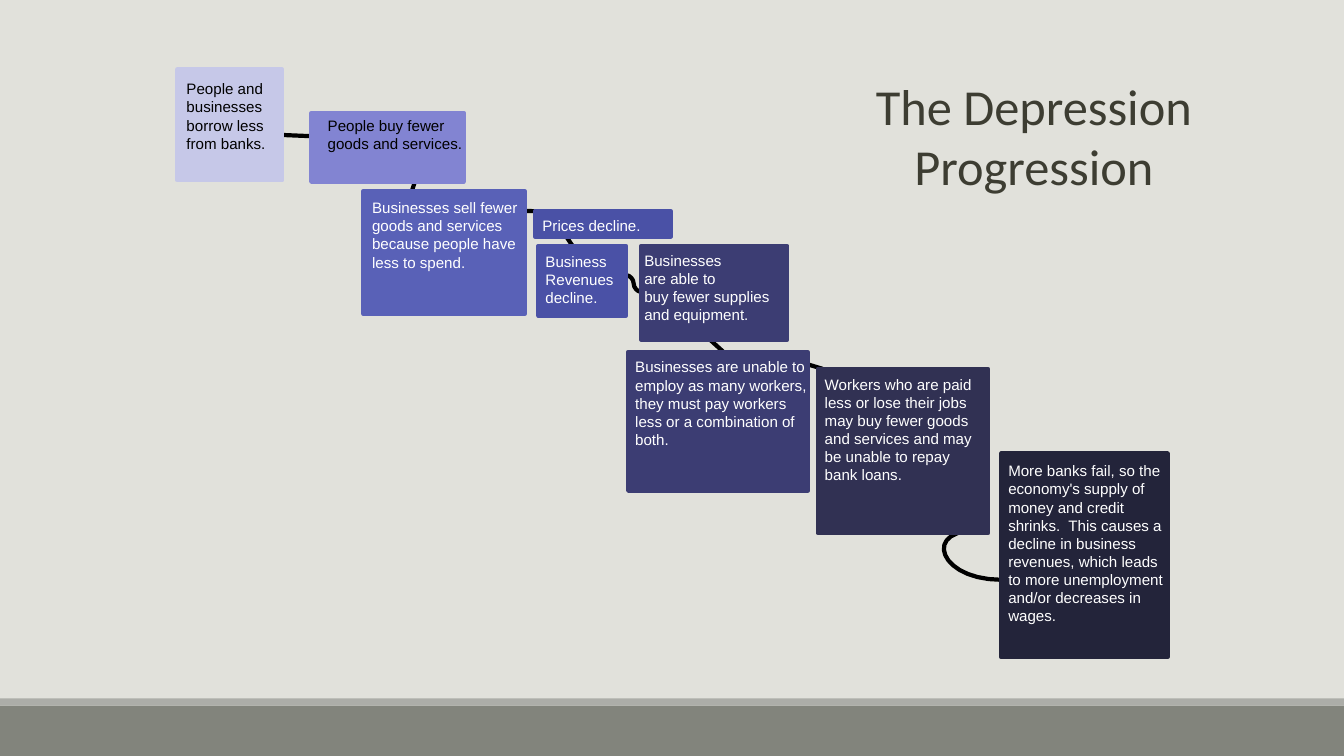
from dataclasses import dataclass

from lxml import etree
from pptx import Presentation
from pptx.dml.color import RGBColor
from pptx.enum.shapes import MSO_CONNECTOR, MSO_SHAPE
from pptx.enum.text import MSO_ANCHOR, MSO_AUTO_SIZE, PP_ALIGN
from pptx.oxml.ns import qn
from pptx.util import Inches, Pt

RECTANGLE = MSO_SHAPE.RECTANGLE
STRAIGHT, CURVE = MSO_CONNECTOR.STRAIGHT, MSO_CONNECTOR.CURVE
ANCHOR_TOP, NO_FIT = MSO_ANCHOR.TOP, MSO_AUTO_SIZE.NONE
ALIGN_LEFT, ALIGN_CENTER = PP_ALIGN.LEFT, PP_ALIGN.CENTER
TITLE_ONLY = 5
SLIDE_WIDTH, SLIDE_HEIGHT = 13.33, 7.5
FOOTER_TOP, EDGE_HEIGHT = 7, 0.07
LINE_WIDTH = Pt(3)
SWING_PIECES = 12

COLORS = {
    "background": "E1E1DB", "footer": "82847C", "footer_edge": "ACADA8",
    "title": "3D3D32", "black": "000000", "white": "FFFFFF",
    "lavender": "C6C8E8", "periwinkle": "8284D2", "blue": "5961B7",
    "indigo": "4A51A6", "navy": "3C3D73", "dusk": "313153", "night": "23243A",
}


@dataclass
class Step:
    """One box of the chain; lengths in inches."""
    left: float
    top: float
    width: float
    height: float
    fill: str
    text: str
    text_color: str = "white"
    left_inset: float = 0.07
    top_inset: float = 0.06
    right_inset: float = 0

    def edge_point(self, side, share):
        """Point on a side, at a share of its length from the left or top."""
        if side in ("left", "right"):
            x = self.left + (self.width if side == "right" else 0)
            return x, self.top + share * self.height
        y = self.top + (self.height if side == "bottom" else 0)
        return self.left + share * self.width, y


STEPS = {
    "borrowing": Step(
        1.76, 0.69, 1.04, 1.1, "lavender",
        "People and businesses\nborrow less\nfrom banks.",
        "black", left_inset=0.09, top_inset=0.1),
    "buying": Step(
        3.09, 1.12, 1.51, 0.68, "periwinkle",
        "People buy fewer goods and services.",
        "black", left_inset=0.16, top_inset=0.03),
    "selling": Step(
        3.6, 1.9, 1.61, 1.21, "blue",
        "Businesses sell fewer goods and services because people have less "
        "to spend.", left_inset=0.09, top_inset=0.07),
    "prices": Step(5.31, 2.09, 1.34, 0.26, "indigo", "Prices decline."),
    "revenues": Step(
        5.34, 2.44, 0.87, 0.69, "indigo", "Business\nRevenues\ndecline."),
    "supplies": Step(
        6.36, 2.44, 1.45, 0.93, "navy",
        "Businesses\nare able to\nbuy fewer supplies and equipment.",
        left_inset=0.03, top_inset=0.05),
    "employment": Step(
        6.23, 3.49, 1.78, 1.38, "navy",
        "Businesses are unable to employ as many workers, they must pay "
        "workers less or a combination of both."),
    "workers": Step(
        8.11, 3.66, 1.69, 1.63, "dusk",
        "Workers who are paid less or lose their jobs may buy fewer goods and "
        "services and may be unable to repay bank loans.", right_inset=0.08),
    "banks": Step(
        9.93, 4.5, 1.65, 2.02, "night",
        "More banks fail, so the economy's supply of money and credit shrinks.  "
        "This causes a decline in business revenues, which leads to more "
        "unemployment and/or decreases in wages.", top_inset=0.08),
}

# Connector kind, then step, side and share of that side for each end
LINKS = [
    (STRAIGHT, ("borrowing", "right", 0.59), ("buying", "left", 0.34)),
    (STRAIGHT, ("buying", "bottom", 0.68), ("selling", "top", 0.3)),
    (STRAIGHT, ("selling", "right", 0.16), ("prices", "left", 0.02)),
    (STRAIGHT, ("prices", "bottom", 0.23), ("revenues", "top", 0.39)),
    (CURVE, ("revenues", "right", 0.42), ("supplies", "left", 0.49)),
    (STRAIGHT, ("supplies", "bottom", 0.47), ("employment", "top", 0.53)),
    (STRAIGHT, ("employment", "right", 0.09), ("workers", "top", 0.03)),
]


def color(name):
    return RGBColor.from_string(COLORS[name])


def set_line(shape, name):
    """Give a shape or connector a thick line with round joins."""
    shape.line.color.rgb = color(name)
    shape.line.width = LINE_WIDTH
    etree.SubElement(shape.line._get_or_add_ln(), qn("a:round"))


def set_font(para, name, size, color_name):
    para.font.name = name
    para.font.size = Pt(size)
    para.font.color.rgb = color(color_name)


def find_point(end):
    name, side, share = end
    return STEPS[name].edge_point(side, share)


def add_rectangle(page, bounds, fill):
    box = page.shapes.add_shape(RECTANGLE, *map(Inches, bounds))
    box.shadow.inherit = False
    box.fill.solid()
    box.fill.fore_color.rgb = color(fill)
    box.line.fill.background()
    return box


def add_link(page, kind, begin, end):
    ends = find_point(begin) + find_point(end)
    link = page.shapes.add_connector(kind, *map(Inches, ends))
    set_line(link, "black")
    etree.SubElement(link._element.spPr, qn("a:effectLst"))


def add_swing(page, begin, end):
    """Draw a cubic curve that leaves to the lower left and arrives level."""
    start, finish = find_point(begin), find_point(end)
    leave = (start[0] - 0.29, start[1] + 0.1)
    arrive = (finish[0] - 0.53, finish[1])
    points = []
    for piece in range(SWING_PIECES + 1):
        t = piece / SWING_PIECES
        weights = ((1 - t) ** 3, 3 * t * (1 - t) ** 2, 3 * t ** 2 * (1 - t), t ** 3)
        points.append([
            Inches(sum(w * value for w, value in zip(weights, axis)))
            for axis in zip(start, leave, arrive, finish)])
    builder = page.shapes.build_freeform(*points[0])
    builder.add_line_segments(points[1:], close=False)
    swing = builder.convert_to_shape()
    swing.shadow.inherit = False
    swing.fill.background()
    set_line(swing, "black")


def add_step(page, step):
    bounds = (step.left, step.top, step.width, step.height)
    box = add_rectangle(page, bounds, step.fill)
    set_line(box, step.fill)
    frame = box.text_frame
    frame.word_wrap = True
    frame.vertical_anchor = ANCHOR_TOP
    frame.margin_left = Inches(step.left_inset)
    frame.margin_top = Inches(step.top_inset)
    frame.margin_right = Inches(step.right_inset)
    frame.margin_bottom = 0
    frame.text = step.text
    for para in frame.paragraphs:
        para.alignment = ALIGN_LEFT
        set_font(para, "Arial", 10.8, step.text_color)


def set_title(page, text):
    title = page.shapes.title
    title.left, title.top = Inches(8.32), Inches(0.69)
    title.width, title.height = Inches(3.87), Inches(1.31)
    frame = title.text_frame
    frame.text = text
    frame.word_wrap = True
    frame.auto_size = NO_FIT
    frame.vertical_anchor = ANCHOR_TOP
    para = frame.paragraphs[0]
    para.alignment = ALIGN_CENTER
    set_font(para, "Calibri", 36, "title")


def main():
    deck = Presentation()
    deck.slide_width, deck.slide_height = Inches(SLIDE_WIDTH), Inches(SLIDE_HEIGHT)
    page = deck.slides.add_slide(deck.slide_layouts[TITLE_ONLY])
    page.background.fill.solid()
    page.background.fill.fore_color.rgb = color("background")
    set_title(page, "The Depression Progression")

    # Footer bars
    add_rectangle(page, (0, FOOTER_TOP, SLIDE_WIDTH, SLIDE_HEIGHT - FOOTER_TOP), "footer")
    add_rectangle(page, (0, FOOTER_TOP - EDGE_HEIGHT, SLIDE_WIDTH, EDGE_HEIGHT), "footer_edge")

    # Links lie behind the boxes
    for kind, begin, end in LINKS:
        add_link(page, kind, begin, end)
    add_swing(page, ("workers", "bottom", 0.82), ("banks", "left", 0.62))
    for step in STEPS.values():
        add_step(page, step)

    deck.save("out.pptx")


if __name__ == "__main__":
    main()
